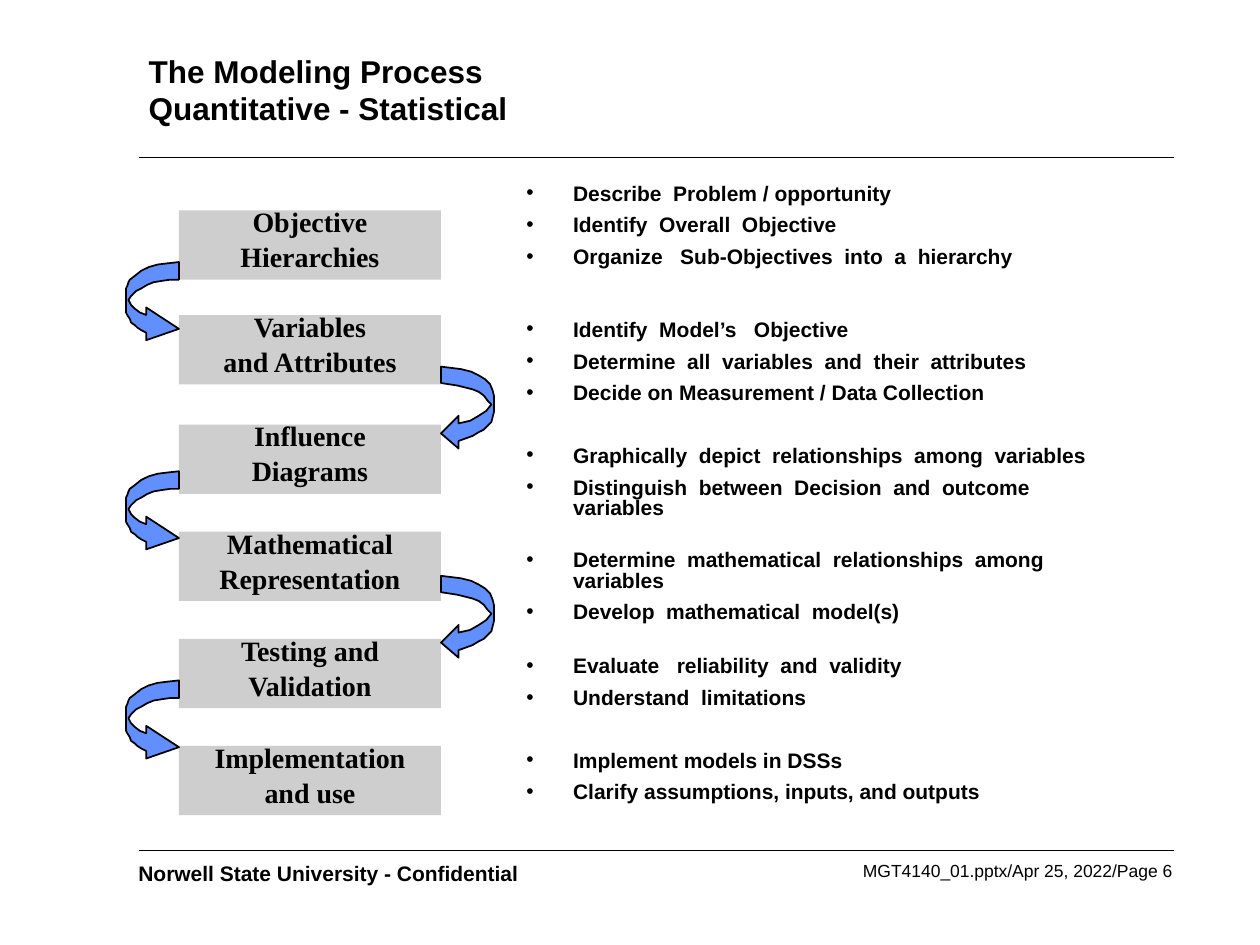
import pptx
import pptx.dml.color
import pptx.enum.shapes
import pptx.enum.text
import pptx.oxml.ns
import pptx.util
from lxml import etree

Inches = pptx.util.Inches
Pt = pptx.util.Pt
RGBColor = pptx.dml.color.RGBColor
ALIGN = pptx.enum.text.PP_ALIGN
ANCHOR = pptx.enum.text.MSO_ANCHOR
qn = pptx.oxml.ns.qn

BLACK = RGBColor(0x00, 0x00, 0x00)
GREY = RGBColor(0xCE, 0xCE, 0xCE)
BLUE = RGBColor(0x61, 0x8F, 0xFD)

TITLE_FONT = {"name": "Arial", "size": Pt(18), "bold": True}
STAGE_FONT = {"name": "Times New Roman", "size": Pt(16), "bold": True}
TASK_FONT = {"name": "Arial", "size": Pt(12), "bold": True}
PAGE_FONT = {"name": "Arial", "size": Pt(10), "bold": False}

STAGE_SPACING = {"alignment": ALIGN.CENTER, "line_spacing": 0.6, "space_before": Pt(8.5)}
TASK_SPACING = {"alignment": ALIGN.LEFT, "line_spacing": 0.8, "space_before": Pt(6.6)}

STAGE_LEFT, STAGE_WIDTH, STAGE_HEIGHT = 1.42, 2.08, 0.55
TASK_LEFT, TASK_INDENT = 4.08, 0.37
ARROW_TOP, ARROW_STEP = 2.08, 0.83

# Stage top, stage lines, task top, task width, task height, tasks
STAGES = [
    (1.67, ["Objective", "Hierarchies"], 1.42, 5.08, 0.78,
     ["Describe  Problem / opportunity",
      "Identify  Overall  Objective",
      "Organize   Sub-Objectives  into  a  hierarchy"]),
    (2.5, ["Variables", "and Attributes"], 2.5, 4.42, 0.78,
     ["Identify  Model’s   Objective",
      "Determine  all  variables  and  their  attributes",
      "Decide on Measurement / Data Collection"]),
    (3.37, ["Influence", "Diagrams"], 3.5, 4.9, 0.52,
     ["Graphically  depict  relationships  among  variables",
      "Distinguish  between  Decision  and  outcome  variables"]),
    (4.22, ["Mathematical", "Representation"], 4.33, 4.9, 0.52,
     ["Determine  mathematical  relationships  among  variables",
      "Develop  mathematical  model(s)"]),
    (5.07, ["Testing and", "Validation"], 5.17, 4.42, 0.52,
     ["Evaluate   reliability  and  validity",
      "Understand  limitations"]),
    (5.92, ["Implementation", "and use"], 5.92, 4.42, 0.52,
     ["Implement models in DSSs",
      "Clarify assumptions, inputs, and outputs"]),
]

# Arrow outlines in hundredths of an inch
LEFT_ARROW = [
    (42, 0), (33, 1), (25, 2), (18, 4), (12, 7), (7, 11), (3, 14), (2, 16),
    (1, 19), (0, 21), (0, 37), (0, 40), (1, 42), (3, 45), (4, 48), (7, 50),
    (9, 52), (12, 54), (16, 56), (16, 62), (42, 53), (16, 36), (16, 42),
    (11, 40), (7, 37), (4, 34), (2, 30), (4, 27), (8, 23), (12, 21),
    (17, 18), (22, 16), (28, 15), (35, 14), (42, 14),
]
RIGHT_ARROW = [
    (0, 0), (8, 1), (16, 2), (24, 4), (30, 7), (35, 10), (39, 14), (41, 19),
    (42, 23), (42, 36), (41, 40), (40, 44), (37, 47), (34, 50), (30, 52),
    (25, 55), (14, 59), (14, 65), (0, 53), (14, 39), (14, 45), (23, 43),
    (30, 39), (36, 35), (40, 30), (37, 27), (34, 23), (30, 20), (25, 18),
    (13, 15), (0, 13),
]


def set_values(target, values):
    for name, value in values.items():
        setattr(target, name, value)


def write_lines(frame, lines, font, spacing):
    """Write each line as a paragraph and return the paragraphs."""
    set_values(frame, {"word_wrap": True, "vertical_anchor": ANCHOR.TOP})
    for index, line in enumerate(lines):
        para = frame.add_paragraph() if index else frame.paragraphs[0]
        set_values(para, spacing)
        span = para.add_run()
        span.text = line
        set_values(span.font, font)
        span.font.color.rgb = BLACK
    return frame.paragraphs


def add_text(page, left, top, width, height, lines, font, spacing):
    box = page.shapes.add_textbox(Inches(left), Inches(top), Inches(width), Inches(height))
    return write_lines(box.text_frame, lines, font, spacing)


def add_bullet(para):
    properties = para._p.get_or_add_pPr()
    properties.set("marL", str(Inches(TASK_INDENT)))
    properties.set("indent", str(-Inches(TASK_INDENT)))
    etree.SubElement(properties, qn("a:buFont")).set("typeface", "Arial")
    etree.SubElement(properties, qn("a:buChar")).set("char", "•")


def add_title(page, text):
    title = page.shapes.title
    set_values(title, {"left": Inches(1.08), "top": Inches(0.25),
                       "width": Inches(8.25), "height": Inches(0.92)})
    frame = title.text_frame
    frame.text = text
    set_values(frame, {"vertical_anchor": ANCHOR.MIDDLE, "word_wrap": True})
    para = frame.paragraphs[0]
    para.alignment = ALIGN.LEFT
    set_values(para.font, TITLE_FONT)
    para.font.color.rgb = BLACK


def add_rule(page, top):
    rule = page.shapes.add_connector(
        pptx.enum.shapes.MSO_CONNECTOR.STRAIGHT,
        Inches(1.1), Inches(top), Inches(9.32), Inches(top))
    rule.line.color.rgb = BLACK
    rule.line.width = Pt(1)
    etree.SubElement(rule._element.spPr, qn("a:effectLst"))


def add_stage(page, top, lines):
    box = page.shapes.add_shape(
        pptx.enum.shapes.MSO_SHAPE.RECTANGLE, Inches(STAGE_LEFT), Inches(top),
        Inches(STAGE_WIDTH), Inches(STAGE_HEIGHT))
    box.shadow.inherit = False
    box.fill.solid()
    box.fill.fore_color.rgb = GREY
    box.line.fill.background()
    write_lines(box.text_frame, lines, STAGE_FONT, STAGE_SPACING)


def add_arrow(page, left, top, outline):
    builder = page.shapes.build_freeform(*outline[0], scale=Inches(0.01))
    builder.add_line_segments(outline[1:], close=True)
    arrow = builder.convert_to_shape(Inches(left), Inches(top))
    arrow.shadow.inherit = False
    arrow.fill.solid()
    arrow.fill.fore_color.rgb = BLUE
    arrow.line.color.rgb = BLACK
    arrow.line.width = Pt(1)


def main():
    deck = pptx.Presentation()
    deck.slide_width, deck.slide_height = Inches(10), Inches(7.5)
    page = deck.slides.add_slide(deck.slide_layouts[5])

    add_title(page, "The Modeling Process\vQuantitative - Statistical")
    for top in (1.25, 6.75):
        add_rule(page, top)
    add_text(page, 1, 6.78, 3.84, 0.3, ["Norwell State University - Confidential"],
             TASK_FONT, {"alignment": ALIGN.LEFT})
    add_text(page, 5.58, 6.78, 3.82, 0.26, ["MGT4140_01.pptx/Apr 25, 2022/Page 6"],
             PAGE_FONT, {"alignment": ALIGN.RIGHT})

    for stage_top, lines, task_top, width, height, tasks in STAGES:
        add_stage(page, stage_top, lines)
        for para in add_text(page, TASK_LEFT, task_top, width, height, tasks,
                             TASK_FONT, TASK_SPACING):
            add_bullet(para)

    sides = [(1, LEFT_ARROW), (STAGE_LEFT + STAGE_WIDTH, RIGHT_ARROW)]
    for index in range(len(STAGES) - 1):
        left, outline = sides[index % 2]
        add_arrow(page, left, ARROW_TOP + index * ARROW_STEP, outline)

    deck.save("out.pptx")


if __name__ == "__main__":
    main()
